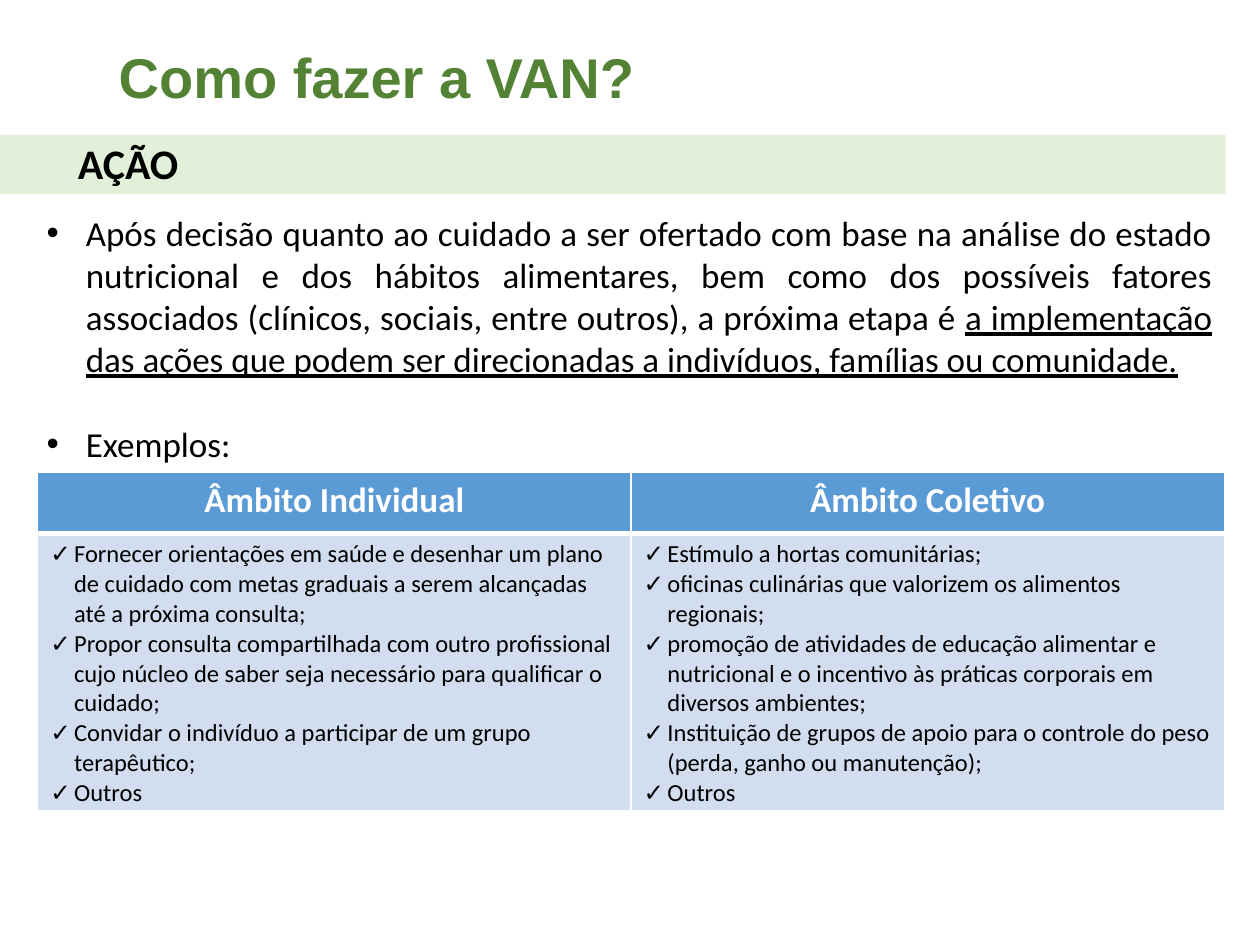
from lxml.etree import SubElement
from pptx import Presentation
from pptx.dml.color import RGBColor as RGB
from pptx.enum.shapes import MSO_SHAPE as Shape
from pptx.enum.text import MSO_ANCHOR as Anchor, PP_ALIGN as Align
from pptx.oxml import parse_xml
from pptx.oxml.ns import nsdecls, qn
from pptx.util import Cm, Pt

# Content: a paragraph is a list of (text, underlined) runs
TITLE = "Como fazer a VAN?"
BAND = "AÇÃO"
INTRO = [
    ("Após decisão quanto ao cuidado a ser ofertado com base na análise do estado "
     "nutricional e dos hábitos alimentares, bem como dos possíveis fatores associados "
     "(clínicos, sociais, entre outros), a próxima etapa é ", False),
    ("a implementação das ações que podem ser direcionadas a indivíduos, famílias ou "
     "comunidade.", True),
]
EXAMPLES = [("Exemplos:", False)]
SCOPES = {
    "Âmbito Individual": [
        "Fornecer orientações em saúde e desenhar um plano de cuidado com metas graduais "
        "a serem alcançadas até a próxima consulta;",
        "Propor consulta compartilhada com outro profissional cujo núcleo de saber seja "
        "necessário para qualificar o cuidado;",
        "Convidar o indivíduo a participar de um grupo terapêutico;",
        "Outros",
    ],
    "Âmbito Coletivo": [
        "Estímulo a hortas comunitárias;",
        "oficinas culinárias que valorizem os alimentos regionais;",
        "promoção de atividades de educação alimentar e nutricional e o incentivo às "
        "práticas corporais em diversos ambientes;",
        "Instituição de grupos de apoio para o controle do peso (perda, ganho ou "
        "manutenção);",
        "Outros",
    ],
}


class Theme:
    heading, body = "Arial", "Calibri"
    title_size, band_size, text_size, list_size = 32, 24, 20, 14
    green, pale_green = "548235", "E2F0D9"
    blue, pale_blue = "5B9BD5", "D2DEEF"
    black, white = "000000", "FFFFFF"


def write(tf, paragraphs, *, size, color=Theme.black, font=Theme.body, bold=False,
          align=Align.LEFT, bullet=None, indent=0, gap=0):
    """Fill a text frame; gap is the space in points between paragraphs."""
    tf.word_wrap = True
    for i, runs in enumerate(paragraphs):
        p = tf.paragraphs[0] if i == 0 else tf.add_paragraph()
        if bullet:
            pPr = p._p.get_or_add_pPr()
            pPr.set("marL", str(indent))
            pPr.set("indent", str(-indent))
            SubElement(pPr, qn("a:buFont"), typeface=Theme.heading)
            SubElement(pPr, qn("a:buChar"), char=bullet)
        p.alignment = align
        if i and gap:
            p.space_before = Pt(gap)
        for text, underlined in [(runs, False)] if isinstance(runs, str) else runs:
            r = p.add_run()
            r.text = text
            f = r.font
            f.name, f.size, f.bold = font, Pt(size), bold
            f.color.rgb = RGB.from_string(color)
            if underlined:
                f.underline = True


def style_cell(cell, fill, **widths):
    """Set the fill and the white borders (L, R, T, B widths in points)."""
    cell.fill.solid()
    cell.fill.fore_color.rgb = RGB.from_string(fill)
    tcPr = cell._tc.get_or_add_tcPr()
    for i, side in enumerate("LRTB"):
        tcPr.insert(i, parse_xml(
            f'<a:ln{side} {nsdecls("a")} w="{Pt(widths.get(side, 1))}"><a:solidFill>'
            f'<a:srgbClr val="{Theme.white}"/></a:solidFill></a:ln{side}>'))


prs = Presentation()
prs.slide_width, prs.slide_height = Cm(25.4), Cm(19.05)
slide = prs.slides.add_slide(prs.slide_layouts[6])
shapes = slide.shapes

# Introduction
sp = shapes.add_textbox(Cm(0.69), Cm(4.14), Cm(24), Cm(5.38))
write(sp.text_frame, [INTRO, EXAMPLES], size=Theme.text_size, align=Align.JUSTIFY,
      bullet="•", indent=Cm(0.79), gap=24.4)

# Table of examples, one column per scope
header_h, body_h, col_w = Cm(1.22), Cm(5.59), Cm(11.96)
table = shapes.add_table(2, len(SCOPES), Cm(0.76), Cm(9.53),
                         col_w * len(SCOPES), header_h + body_h).table
table.rows[0].height, table.rows[1].height = header_h, body_h
for col, (scope, actions) in enumerate(SCOPES.items()):
    table.columns[col].width = col_w
    head, body = table.cell(0, col), table.cell(1, col)
    style_cell(head, Theme.blue, B=3)
    style_cell(body, Theme.pale_blue, T=3)
    write(head.text_frame, [scope], size=Theme.text_size, color=Theme.white,
          bold=True, align=Align.CENTER)
    write(body.text_frame, actions, size=Theme.list_size, bullet="✓", indent=Cm(0.48))

# Section band
sp = shapes.add_shape(Shape.RECTANGLE, Cm(-0.03), Cm(2.72), Cm(24.74), Cm(1.19))
sp.shadow.inherit = False
sp.fill.solid()
sp.fill.fore_color.rgb = RGB.from_string(Theme.pale_green)
sp.line.fill.background()
tf = sp.text_frame
tf.vertical_anchor, tf.margin_left = Anchor.BOTTOM, Cm(1.6)
write(tf, [BAND], size=Theme.band_size, bold=True)

# Title
sp = shapes.add_textbox(Cm(0.89), Cm(1.14), Cm(13.41), Cm(1.19))
sp.text_frame.vertical_anchor = Anchor.BOTTOM
write(sp.text_frame, [TITLE], size=Theme.title_size, color=Theme.green,
      font=Theme.heading, bold=True, align=Align.CENTER)

prs.save("out.pptx")
